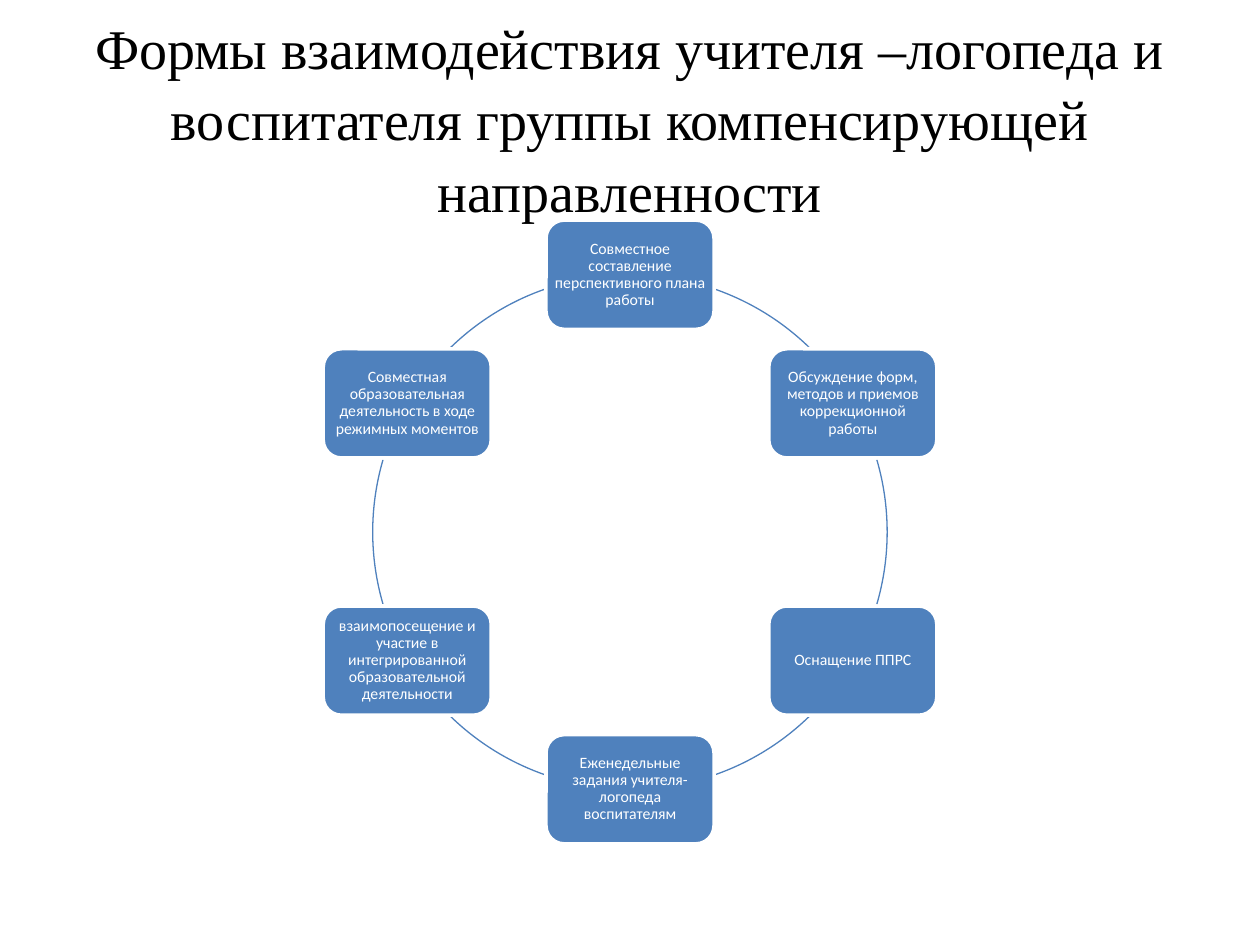
from dataclasses import dataclass
from math import cos, radians, sin

from pptx import Presentation
from pptx.dml.color import RGBColor
from pptx.enum.shapes import MSO_SHAPE as Shape
from pptx.enum.text import MSO_ANCHOR as Anchor, MSO_AUTO_SIZE as AutoSize, PP_ALIGN as Align
from pptx.util import Pt

COLORS = {"blue": "4F81BD", "white": "FFFFFF", "black": "000000"}
CENTER_X, CENTER_Y, RADIUS = 360, 304, 147
NODE_W, NODE_H = 96, 62.4


@dataclass
class Node:
    text: str
    angle: float


@dataclass
class Arc:
    middle: float
    half_span: float


LABELS = [
    "Совместное составление перспективного плана работы",
    "Обсуждение форм, методов и приемов коррекционной работы",
    "Оснащение ППРС",
    "Еженедельные задания учителя-логопеда воспитателям",
    "взаимопосещение и участие в интегрированной образовательной деятельности",
    "Совместная образовательная деятельность в ходе режимных моментов",
]
NODES = [Node(text, 60 * i - 90) for i, text in enumerate(LABELS)]
ARCS = [Arc(m, 16.3 if m % 180 == 0 else 12.7) for m in (-58, 0, 58, 122, 180, 238)]


def color(name: str) -> RGBColor:
    return RGBColor.from_string(COLORS[name])


def add_title(slide, text: str) -> None:
    title = slide.shapes.title
    title.left, title.top, title.width, title.height = Pt(36), Pt(21.6), Pt(648), Pt(90)
    tf = title.text_frame
    tf.text = text
    tf.auto_size = AutoSize.NONE
    tf.vertical_anchor = Anchor.MIDDLE
    p = tf.paragraphs[0]
    p.alignment = Align.CENTER
    p.line_spacing = 1.06
    p.font.name, p.font.size = "Times New Roman", Pt(32)
    p.font.color.rgb = color("black")


def add_arc(slide, arc: Arc) -> None:
    sp = slide.shapes.add_shape(Shape.ARC, Pt(CENTER_X - RADIUS), Pt(CENTER_Y - RADIUS),
                                Pt(2 * RADIUS), Pt(2 * RADIUS))
    sp.shadow.inherit = False
    sp.fill.background()
    sp.line.color.rgb = color("blue")
    sp.line.width = Pt(0.75)
    for i, angle in enumerate((arc.middle - arc.half_span, arc.middle + arc.half_span)):
        sp.adjustments[i] = angle % 360 * 0.6


def add_node(slide, node: Node) -> None:
    x = CENTER_X + RADIUS * cos(radians(node.angle))
    y = CENTER_Y + RADIUS * sin(radians(node.angle))
    sp = slide.shapes.add_shape(Shape.ROUNDED_RECTANGLE, Pt(x - NODE_W / 2), Pt(y - NODE_H / 2),
                                Pt(NODE_W), Pt(NODE_H))
    sp.shadow.inherit = False
    sp.fill.solid()
    sp.fill.fore_color.rgb = color("blue")
    sp.line.color.rgb = color("white")
    sp.line.width = Pt(2)
    tf = sp.text_frame
    tf.word_wrap = True
    tf.vertical_anchor = Anchor.MIDDLE
    tf.margin_left = tf.margin_right = tf.margin_top = tf.margin_bottom = 0
    p = tf.paragraphs[0]
    p.text = node.text
    p.alignment = Align.CENTER
    p.line_spacing = 0.9
    p.font.name, p.font.size = "Calibri", Pt(9)
    p.font.color.rgb = color("white")


def main() -> None:
    prs = Presentation()
    prs.slide_width, prs.slide_height = Pt(720), Pt(540)
    slide = prs.slides.add_slide(prs.slide_layouts[5])
    add_title(slide, "Формы взаимодействия учителя –логопеда и воспитателя группы "
                     "компенсирующей направленности")
    for arc in ARCS:
        add_arc(slide, arc)
    for node in NODES:
        add_node(slide, node)
    prs.save("out.pptx")


if __name__ == "__main__":
    main()
